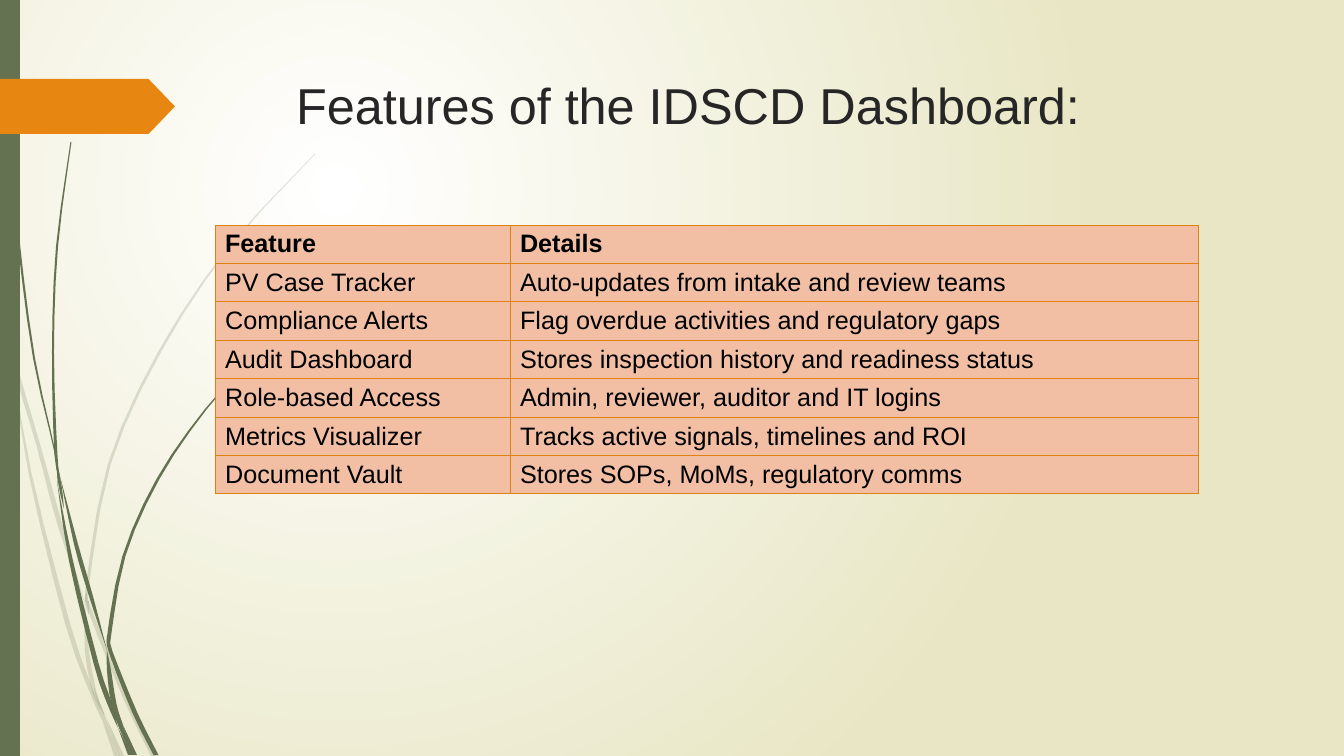
from lxml.etree import SubElement
from pptx import Presentation
from pptx.dml.color import RGBColor
from pptx.enum.shapes import MSO_SHAPE
from pptx.enum.text import MSO_ANCHOR, PP_ALIGN
from pptx.oxml import parse_xml
from pptx.oxml.ns import nsdecls, qn
from pptx.util import Emu, Pt

EMU_PER_PX = 914400 / 100.8
SLIDE_WIDTH, SLIDE_HEIGHT = 1344, 756
FONT = "Arial"
WHITE = RGBColor(0xFF, 0xFF, 0xFF)
BLACK = RGBColor(0x00, 0x00, 0x00)
CREAM = RGBColor(0xE8, 0xE6, 0xC4)
GREEN = RGBColor(0x64, 0x72, 0x52)
ORANGE = RGBColor(0xE7, 0x87, 0x12)
TITLE_GREY = RGBColor(0x26, 0x26, 0x26)
PEACH = RGBColor(0xF2, 0xBF, 0xA5)
BORDER = RGBColor(0xDD, 0x81, 0x11)

# Each blade of grass is a list of (x, y, width) along its spine, in px.
PALE_BLADES = [
    [(0, 284, 0), (2, 301, 4), (11, 353, 0)],
    [(14, 348, 0), (19, 379, 4), (38, 444, 4), (60, 525, 5), (85, 604, 0)],
    [(89, 601, 0), (91, 613, 4), (126, 699, 5), (154, 757, 5)],
    [(106, 717, 0), (122, 757, 5)],
    [(11, 353, 0), (30, 473, 3), (68, 625, 5), (92, 693, 4), (102, 720, 0)],
    [(85, 604, 0), (87, 651, 4), (95, 694, 4), (106, 717, 0)],
    [(315, 154, 1), (230, 246, 2), (160, 351, 3), (109, 465, 3), (87, 589, 3),
     (89, 601, 0)],
    [(102, 720, 0), (117, 757, 5)],
    [(86, 591, 0), (87, 603, 4), (89, 615, 0)],
    [(94, 688, 0), (104, 719, 4), (120, 757, 0)],
]
DARK_BLADES = [
    [(4, 0, 1), (8, 110, 1), (18, 235, 2), (34, 358, 2), (56, 457, 1),
     (57, 485, 0)],
    [(60, 476, 0), (76, 544, 4), (91, 596, 4), (107, 650, 0)],
    [(111, 646, 0), (113, 658, 4), (135, 713, 5), (156, 755, 5)],
    [(57, 481, 0), (71, 561, 4), (96, 663, 5), (109, 702, 5), (118, 728, 0)],
    [(71, 142, 1), (57, 247, 2), (53, 352, 2), (56, 455, 3), (60, 476, 0)],
    [(123, 725, 0), (135, 755, 4)],
    [(55, 453, 0), (60, 485, 3), (64, 509, 0)],
    [(262, 347, 1), (206, 409, 2), (158, 479, 3), (124, 556, 3), (109, 637, 4),
     (111, 646, 0)],
    [(118, 728, 0), (130, 755, 4)],
    [(107, 650, 0), (109, 670, 4), (114, 704, 5), (123, 725, 0)],
    [(107, 636, 0), (109, 646, 4), (112, 661, 0)],
    [(111, 697, 0), (117, 716, 5), (132, 755, 3)],
]
FEATURES = [
    ("Feature", "Details"),
    ("PV Case Tracker", "Auto-updates from intake and review teams"),
    ("Compliance Alerts", "Flag overdue activities and regulatory gaps"),
    ("Audit Dashboard", "Stores inspection history and readiness status"),
    ("Role-based Access", "Admin, reviewer, auditor and IT logins"),
    ("Metrics Visualizer", "Tracks active signals, timelines and ROI"),
    ("Document Vault", "Stores SOPs, MoMs, regulatory comms"),
]


def px(length):
    return Emu(round(length * EMU_PER_PX))


def set_background(slide):
    """Radial gradient, white near the upper left and cream at the edges."""
    fill = slide.background.fill
    fill.gradient()
    for stop, color, position in zip(fill.gradient_stops, (WHITE, CREAM), (0, 1)):
        stop.color.rgb = color
        stop.position = position
    gradient = slide.element.find(".//" + qn("a:gradFill"))
    gradient.replace(gradient.find(qn("a:lin")), parse_xml(
        f'<a:path {nsdecls("a")} path="circle"><a:fillToRect l="50000" t="50000"'
        ' r="100000" b="100000"/></a:path>'))


def paint(shape, color, alpha=None):
    shape.shadow.inherit = False
    shape.fill.solid()
    shape.fill.fore_color.rgb = color
    shape.line.fill.background()
    if alpha is not None:
        rgb = shape.element.spPr.find(qn("a:solidFill")).find(qn("a:srgbClr"))
        SubElement(rgb, qn("a:alpha"), val=str(alpha * 1000))


def smooth_spine(points, steps=3):
    """Points of a Catmull-Rom curve through the given points."""
    padded = [points[0], *points, points[-1]]
    curve = []
    for before, start, end, after in zip(padded, padded[1:], padded[2:], padded[3:]):
        for step in range(steps):
            t = step / steps
            curve.append(tuple(
                (2 * b + (c - a) * t + (2 * a - 5 * b + 4 * c - d) * t ** 2
                 + (3 * b - a - 3 * c + d) * t ** 3) / 2
                for a, b, c, d in zip(before, start, end, after)))
    return curve + [points[-1]]


def add_blade(slide, points, alpha=None):
    spine = smooth_spine(points)
    left = [(x - width / 2, y) for x, y, width in spine]
    right = [(x + width / 2, y) for x, y, width in reversed(spine)]
    outline = [(px(x), px(y)) for x, y in left + right]
    builder = slide.shapes.build_freeform(*outline[0])
    builder.add_line_segments(outline[1:], close=True)
    paint(builder.convert_to_shape(), GREEN, alpha)


def add_block(slide, kind, left, top, width, height, color):
    shape = slide.shapes.add_shape(kind, px(left), px(top), px(width), px(height))
    paint(shape, color)
    return shape


def format_text(text_frame, size, color, bold=False):
    paragraph = text_frame.paragraphs[0]
    paragraph.alignment = PP_ALIGN.LEFT
    font = paragraph.runs[0].font
    font.name, font.size, font.bold = FONT, Pt(size), bold
    font.color.rgb = color


def set_title(slide, text):
    title = slide.shapes.title
    title.left, title.top, title.width, title.height = px(286), px(69), px(983), px(94)
    title.text_frame.text = text
    title.text_frame.vertical_anchor = MSO_ANCHOR.TOP
    format_text(title.text_frame, 36, TITLE_GREY)


def add_borders(cell):
    properties = cell._tc.get_or_add_tcPr()
    for index, side in enumerate(("lnL", "lnR", "lnT", "lnB")):
        properties.insert(index, parse_xml(
            f'<a:{side} {nsdecls("a")} w="{Pt(0.75)}"><a:solidFill>'
            f'<a:srgbClr val="{BORDER}"/></a:solidFill></a:{side}>'))


def add_feature_table(slide):
    table = slide.shapes.add_table(
        len(FEATURES), 2, px(215), px(225), px(983), px(269)).table
    for column, width in zip(table.columns, (295, 688)):
        column.width = px(width)
    for row_index, texts in enumerate(FEATURES):
        for column_index, text in enumerate(texts):
            cell = table.cell(row_index, column_index)
            cell.text_frame.text = text
            cell.vertical_anchor = MSO_ANCHOR.MIDDLE
            cell.margin_top = cell.margin_bottom = 0
            cell.fill.solid()
            cell.fill.fore_color.rgb = PEACH
            add_borders(cell)
            format_text(cell.text_frame, 18, BLACK, bold=row_index == 0)


def main():
    presentation = Presentation()
    presentation.slide_width = px(SLIDE_WIDTH)
    presentation.slide_height = px(SLIDE_HEIGHT)
    slide = presentation.slides.add_slide(presentation.slide_layouts[5])
    set_background(slide)
    for blade in PALE_BLADES:
        add_blade(slide, blade, alpha=20)
    for blade in DARK_BLADES:
        add_blade(slide, blade)
    add_block(slide, MSO_SHAPE.RECTANGLE, 0, 0, 20, SLIDE_HEIGHT, GREEN)
    arrow = add_block(slide, MSO_SHAPE.PENTAGON, 0, 79, 175, 55, ORANGE)
    arrow.adjustments[0] = 0.48
    set_title(slide, "Features of the IDSCD Dashboard:")
    add_feature_table(slide)
    presentation.save("out.pptx")


if __name__ == "__main__":
    main()
